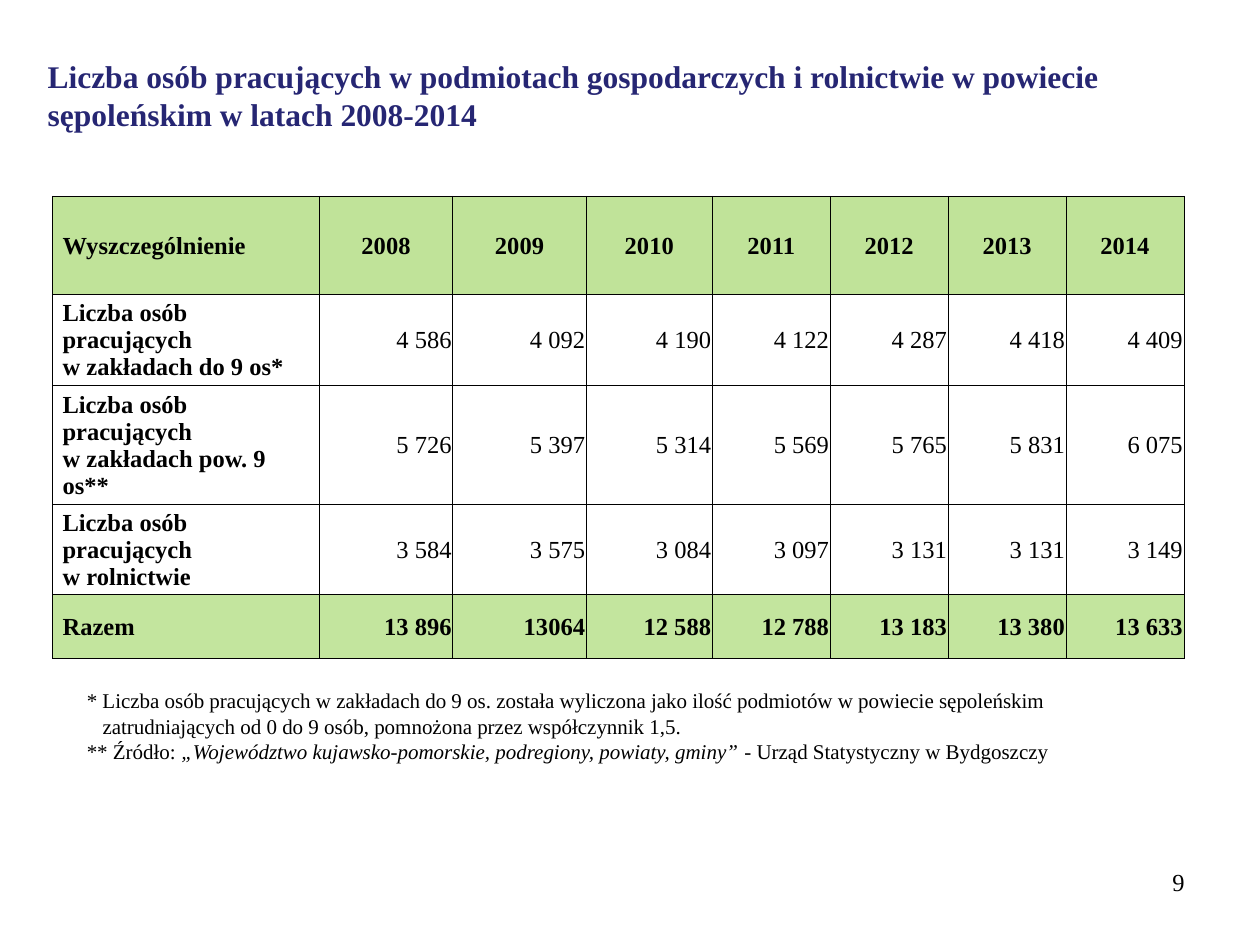
from dataclasses import dataclass

from lxml.etree import SubElement
from pptx import Presentation
from pptx.dml.color import RGBColor
from pptx.enum.text import MSO_ANCHOR, MSO_AUTO_SIZE, PP_ALIGN
from pptx.oxml.ns import qn
from pptx.util import Pt


@dataclass(frozen=True)
class Theme:
    font: str = "Times New Roman"
    title_color: str = "262673"
    text_color: str = "000000"
    title_size: int = 18
    table_size: int = 14
    note_size: int = 12
    border_width: float = 0.5


@dataclass(frozen=True)
class Fill:
    color: str
    opacity: int = 100


@dataclass(frozen=True)
class Row:
    height: float
    label: str
    values: tuple[str, ...]
    label_fill: Fill
    value_fill: Fill | None = None
    bold: bool = False
    align: PP_ALIGN = PP_ALIGN.RIGHT


@dataclass(frozen=True)
class Span:
    text: str
    italic: bool = False


@dataclass(frozen=True)
class Note:
    spans: tuple[Span, ...]
    margin: float = 0


THEME = Theme()
HEADER = Fill("C0E399")
PALE = Fill("FFFFFF", 55)
TOTAL = Fill("92D050", 55)

COLUMN_WIDTHS = (152.5, 76.3, 76.3, 72) + (67.4,) * 4
ROWS = (
    Row(56, "Wyszczególnienie", tuple(str(year) for year in range(2008, 2015)),
        HEADER, HEADER, True, PP_ALIGN.CENTER),
    Row(52, "Liczba osób pracujących \nw zakładach do 9 os*",
        ("4 586", "4 092", "4 190", "4 122", "4 287", "4 418", "4 409"), PALE),
    Row(45.5, "Liczba osób pracujących \nw zakładach pow. 9 os**",
        ("5 726", "5 397", "5 314", "5 569", "5 765", "5 831", "6 075"), PALE),
    Row(51.5, "Liczba osób pracujących \nw rolnictwie",
        ("3 584", "3 575", "3 084", "3 097", "3 131", "3 131", "3 149"), PALE),
    Row(36.5, "Razem",
        ("13 896", "13064", "12 588", "12 788", "13 183", "13 380", "13 633"),
        TOTAL, TOTAL, True),
)
NOTES = (
    Note((Span("* Liczba osób pracujących w zakładach do 9 os. została wyliczona "
               "jako ilość podmiotów w powiecie sępoleńskim"),)),
    Note((Span("zatrudniających od 0 do 9 osób, pomnożona przez współczynnik 1,5."),),
         margin=9),
    Note((Span("** Źródło: "),
          Span("„Województwo kujawsko-pomorskie, podregiony, powiaty, gminy” ", True),
          Span("- Urząd Statystyczny w Bydgoszczy"))),
)


def add_run(paragraph, text: str, size: float, color: str = THEME.text_color,
            bold: bool = False, italic: bool = False) -> None:
    run = paragraph.add_run()
    run.text = text
    font = run.font
    font.name, font.size = THEME.font, Pt(size)
    font.bold, font.italic = bold, italic
    font.color.rgb = RGBColor.from_string(color)


def place(shape, left: float, top: float, width: float, height: float) -> None:
    shape.left, shape.top = Pt(left), Pt(top)
    shape.width, shape.height = Pt(width), Pt(height)


def add_borders(cell) -> None:
    properties = cell._tc.get_or_add_tcPr()
    for side in ("a:lnL", "a:lnR", "a:lnT", "a:lnB"):
        line = SubElement(properties, qn(side), w=str(Pt(THEME.border_width)))
        solid = SubElement(line, qn("a:solidFill"))
        SubElement(solid, qn("a:srgbClr"), val=THEME.text_color)


def fill_cell(cell, fill: Fill | None) -> None:
    if fill is None:
        cell.fill.background()
        return
    cell.fill.solid()
    cell.fill.fore_color.rgb = RGBColor.from_string(fill.color)
    if fill.opacity < 100:
        color = cell._tc.tcPr.find(qn("a:solidFill")).find(qn("a:srgbClr"))
        SubElement(color, qn("a:alpha"), val=str(fill.opacity * 1000))


def write_cell(cell, text: str, fill: Fill | None, bold: bool,
               align: PP_ALIGN, left_margin: float) -> None:
    cell.margin_left = Pt(left_margin)
    cell.margin_right = cell.margin_top = Pt(0.7)
    cell.margin_bottom = Pt(0)
    cell.vertical_anchor = MSO_ANCHOR.MIDDLE
    add_borders(cell)
    fill_cell(cell, fill)
    paragraph = cell.text_frame.paragraphs[0]
    paragraph.alignment = align
    for index, line in enumerate(text.split("\n")):
        if index:
            paragraph.add_line_break()
        add_run(paragraph, line, THEME.table_size, bold=bold)


def add_employment_table(slide) -> None:
    frame = slide.shapes.add_table(
        len(ROWS), len(COLUMN_WIDTHS), Pt(30), Pt(112.2),
        Pt(sum(COLUMN_WIDTHS)), Pt(sum(row.height for row in ROWS)))
    table = frame.table
    table.first_row = table.horz_banding = False
    for column, width in zip(table.columns, COLUMN_WIDTHS):
        column.width = Pt(width)
    for table_row, row in zip(table.rows, ROWS):
        table_row.height = Pt(row.height)
        label, *values = table_row.cells
        write_cell(label, row.label, row.label_fill, True, PP_ALIGN.LEFT, 5.8)
        for cell, value in zip(values, row.values):
            write_cell(cell, value, row.value_fill, row.bold, row.align, 0.7)


def add_title(slide) -> None:
    title = slide.shapes.title
    place(title, 20, 29, 689, 51)
    frame = title.text_frame
    frame.word_wrap = True
    frame.auto_size = MSO_AUTO_SIZE.NONE
    frame.vertical_anchor = MSO_ANCHOR.TOP
    paragraph = frame.paragraphs[0]
    paragraph.alignment = PP_ALIGN.LEFT
    add_run(paragraph, "Liczba osób pracujących w podmiotach gospodarczych i rolnictwie "
            "w powiecie sępoleńskim w latach 2008-2014",
            THEME.title_size, THEME.title_color, bold=True)


def add_notes(slide) -> None:
    frame = slide.shapes.add_textbox(Pt(42.5), Pt(389.5), Pt(641.5), Pt(51)).text_frame
    frame.word_wrap = True
    for index, note in enumerate(NOTES):
        paragraph = frame.add_paragraph() if index else frame.paragraphs[0]
        if note.margin:
            paragraph._p.get_or_add_pPr().set("marL", str(Pt(note.margin)))
        for span in note.spans:
            add_run(paragraph, span.text, THEME.note_size, italic=span.italic)


def add_page_number(slide) -> None:
    frame = slide.shapes.add_textbox(Pt(516), Pt(492), Pt(168), Pt(37.5)).text_frame
    frame.word_wrap = True
    paragraph = frame.paragraphs[0]
    paragraph.alignment = PP_ALIGN.RIGHT
    add_run(paragraph, "9", THEME.table_size)


def main() -> None:
    presentation = Presentation()
    presentation.slide_width, presentation.slide_height = Pt(720), Pt(540)
    slide = presentation.slides.add_slide(presentation.slide_layouts[5])  # Title Only

    # Page number, table, heading and footnotes
    add_page_number(slide)
    add_employment_table(slide)
    add_title(slide)
    add_notes(slide)
    presentation.save("out.pptx")


if __name__ == "__main__":
    main()
